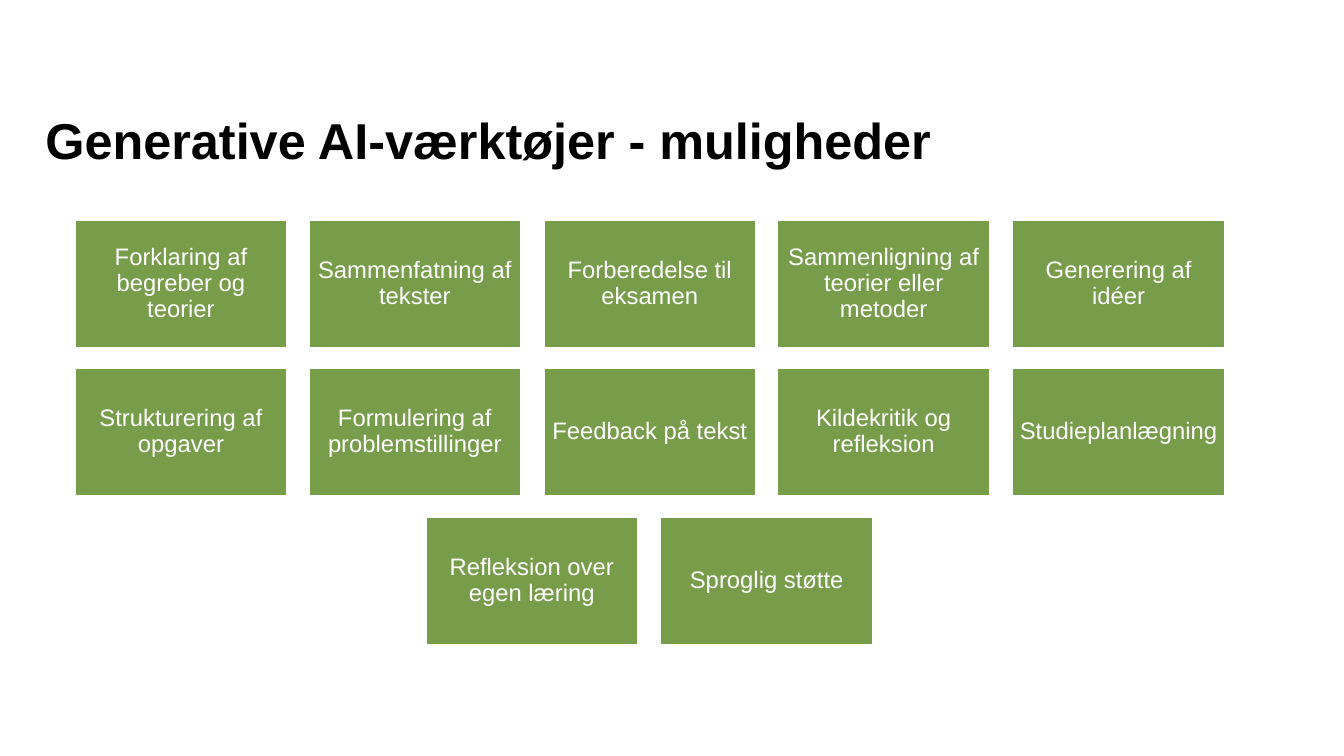
from pptx import Presentation
from pptx.dml.color import RGBColor
from pptx.enum.shapes import MSO_SHAPE
from pptx.enum.text import MSO_ANCHOR, PP_ALIGN
from pptx.util import Pt

PX = 9144  # 100 px to the inch
BLACK = RGBColor(0x00, 0x00, 0x00)
WHITE = RGBColor(0xFF, 0xFF, 0xFF)
GREEN = RGBColor(0x78, 0x9D, 0x4A)

GRID_LEFT, GRID_TOP = 74, 218
CARD_WIDTH, CARD_HEIGHT = 211, 127
COLUMNS = 5
COLUMN_SPAN = 930  # from the first column's left edge to the last's
ROW_SPAN = 295  # from the first row's top edge to the last's

CARD_ROWS = [
    ["Forklaring af begreber og teorier", "Sammenfatning af tekster",
     "Forberedelse til eksamen", "Sammenligning af teorier eller metoder",
     "Generering af idéer"],
    ["Strukturering af opgaver", "Formulering af problemstillinger",
     "Feedback på tekst", "Kildekritik og refleksion", "Studieplanlægning"],
    ["Refleksion over egen læring", "Sproglig støtte"],
]


def write_text(shape, text, size, color, inset, line_spacing):
    """Fill the shape with one Arial paragraph and return that paragraph."""
    frame = shape.text_frame
    frame.word_wrap = True
    frame.margin_left = frame.margin_right = inset * PX
    frame.margin_top = frame.margin_bottom = inset * PX
    frame.text = text
    para = frame.paragraphs[0]
    para.line_spacing = line_spacing
    font = para.runs[0].font
    font.name = "Arial"
    font.size = Pt(size)
    font.color.rgb = color
    return para


deck = Presentation()
deck.slide_width = 1333 * PX
deck.slide_height = 750 * PX
page = deck.slides.add_slide(deck.slide_layouts[6])

title = page.shapes.add_textbox(45 * PX, 112 * PX, 1199 * PX, 73 * PX)
title_para = write_text(title, "Generative AI-værktøjer - muligheder", 36, BLACK, 0, 0.97)
title_para.runs[0].font.bold = True

for row, labels in enumerate(CARD_ROWS):
    top = GRID_TOP + ROW_SPAN * row // (len(CARD_ROWS) - 1)
    empty_columns = COLUMNS - len(labels)
    for column, label in enumerate(labels):
        half_steps = 2 * column + empty_columns  # centres a short row
        left = GRID_LEFT + COLUMN_SPAN * half_steps // (2 * (COLUMNS - 1))
        card = page.shapes.add_shape(
            MSO_SHAPE.RECTANGLE, left * PX, top * PX, CARD_WIDTH * PX, CARD_HEIGHT * PX)
        card.shadow.inherit = False
        card.fill.solid()
        card.fill.fore_color.rgb = GREEN
        card.line.color.rgb = WHITE
        card.line.width = Pt(1.5)
        card.text_frame.vertical_anchor = MSO_ANCHOR.MIDDLE
        card_para = write_text(card, label, 17, WHITE, 7, 0.9)
        card_para.alignment = PP_ALIGN.CENTER

deck.save("out.pptx")
